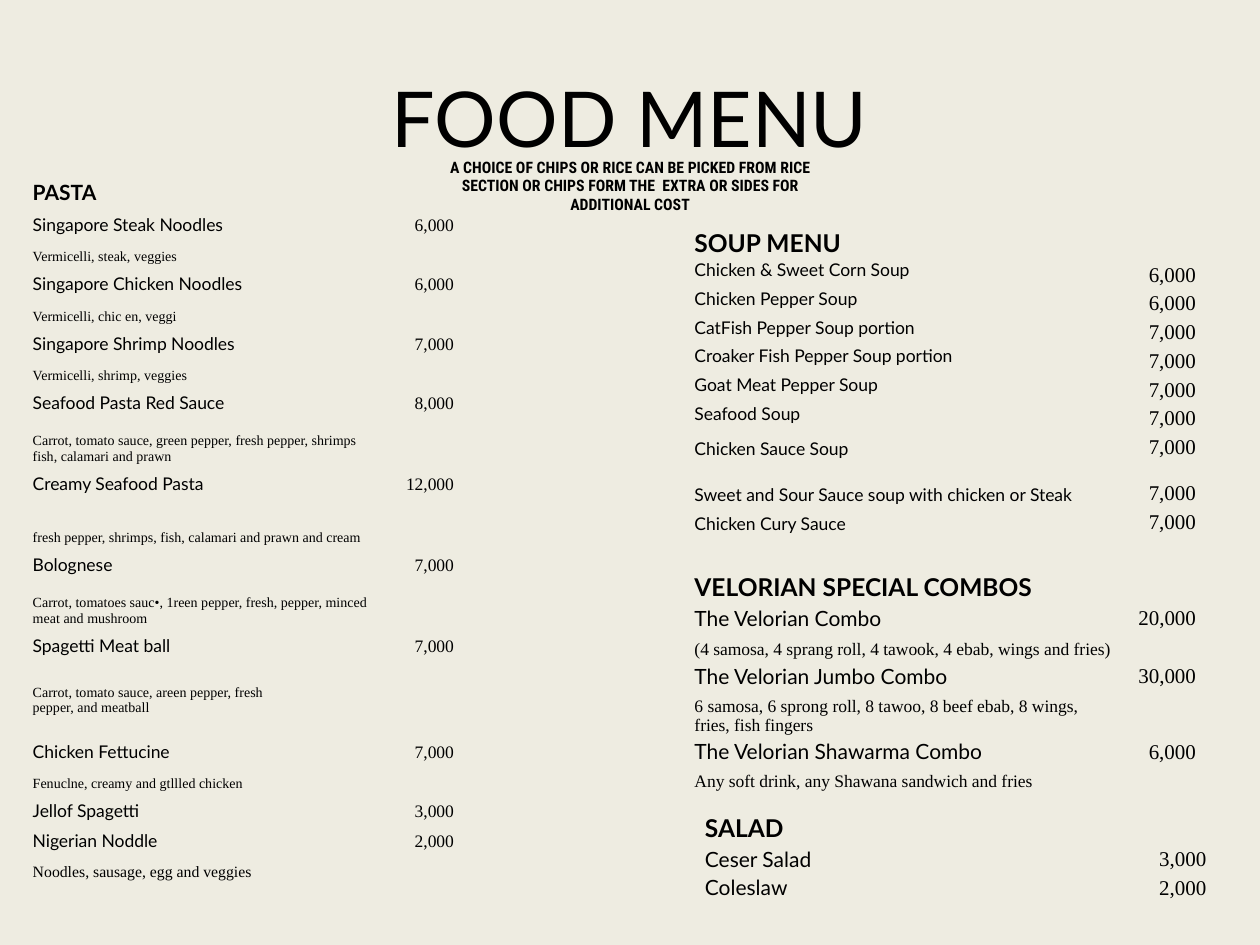
from dataclasses import dataclass

import lxml.etree
import pptx
import pptx.dml.color
import pptx.enum.text
import pptx.oxml.ns
import pptx.util

Cm = pptx.util.Cm
Pt = pptx.util.Pt
Align = pptx.enum.text.PP_ALIGN
Anchor = pptx.enum.text.MSO_ANCHOR


@dataclass(frozen=True)
class Theme:
    paper: str = "EEECE1"
    ink: str = "000000"
    sans: str = "Lato"
    serif: str = "Times New Roman"
    narrow: str = "Roboto Condensed"
    title: float = 44
    intro: float = 9
    inset: float = 0.03
    plain: str = "{2D5ABB26-0587-4C30-8999-92F81FD0307C}"  # table without style


@dataclass(frozen=True)
class Dish:
    name: str
    price: str
    note: str = ""
    note_high: float = 0.59
    note_size: float = 0  # 0 takes the size of the menu
    note_gap: float = 0  # space under the note
    high: float = 0  # 0 takes the height of the menu
    top: bool = False  # name sits at the top of its row


@dataclass(frozen=True)
class Menu:
    head: str
    left: float
    top: float
    wide: tuple[float, float]
    head_high: float
    high: float
    head_size: float
    name_size: float
    price_size: float
    note_size: float
    dishes: tuple[Dish, ...]


THEME = Theme()
PAGE = (25.4, 19.05)
WIDE = (8.47, 1.7)
INTRO = ("A CHOICE OF CHIPS OR RICE CAN BE PICKED FROM RICE SECTION OR CHIPS "
         "FORM THE  EXTRA OR SIDES FOR ADDITIONAL COST")

PASTA = Menu("PASTA", 0.63, 3.39, (7.12, 1.43), 0.74, 0.61, 12, 10, 10, 8, (
    Dish("Singapore Steak Noodles", "6,000", "Vermicelli, steak, veggies"),
    Dish("Singapore Chicken Noodles", "6,000", "Vermicelli, chic en, veggi"),
    Dish("Singapore Shrimp Noodles", "7,000", "Vermicelli, shrimp, veggies"),
    Dish("Seafood Pasta Red Sauce", "8,000",
         "Carrot, tomato sauce, green pepper, fresh pepper, shrimps fish, calamari and prawn", 1.02),
    Dish("Creamy Seafood Pasta", "12,000",
         "fresh pepper, shrimps, fish, calamari and prawn and cream", 1.02),
    Dish("Bolognese", "7,000",
         "Carrot, tomatoes sauc•, 1reen pepper, fresh, pepper, minced meat and mushroom", 1.02),
    Dish("Spagetti Meat ball", "7,000",
         "Carrot, tomato sauce, areen pepper, fresh\npepper, and meatball", 1.52, note_gap=0.32),
    Dish("Chicken Fettucine", "7,000", "Fenuclne, creamy and gtllled chicken"),
    Dish("Jellof Spagetti", "3,000"),
    Dish("Nigerian Noddle", "2,000", "Noodles, sausage, egg and veggies", note_size=9),
))

SOUP = Menu("SOUP MENU", 13.97, 4.46, WIDE, 0.74, 0.58, 14, 10, 12, 10, (
    Dish("Chicken & Sweet Corn Soup", "6,000", top=True),
    Dish("Chicken Pepper Soup", "6,000", top=True),
    Dish("CatFish Pepper Soup portion", "7,000", top=True),
    Dish("Croaker Fish Pepper Soup portion", "7,000", top=True),
    Dish("Goat Meat Pepper Soup", "7,000", top=True),
    Dish("Seafood Soup", "7,000", top=True),
    Dish("Chicken Sauce Soup", "7,000"),
    Dish("Sweet and Sour Sauce soup with chicken or Steak", "7,000", high=0.93),
    Dish("Chicken Cury Sauce", "7,000"),
))

COMBOS = Menu("VELORIAN SPECIAL COMBOS", 13.97, 11.42, WIDE, 0.71, 0.58, 14, 12, 12, 10, (
    Dish("The Velorian Combo", "20,000",
         "(4 samosa, 4 sprang roll, 4 tawook, 4 ebab, wings and fries)"),
    Dish("The Velorian Jumbo Combo", "30,000",
         "6 samosa, 6 sprong roll, 8 tawoo, 8 beef ebab, 8 wings, fries, fish fingers", 0.94),
    Dish("The Velorian Shawarma Combo", "6,000",
         "Any soft drink, any Shawana sandwich and fries", 0.56),
))

SALAD = Menu("SALAD", 14.18, 16.28, WIDE, 0.71, 0.58, 14, 12, 12, 10, (
    Dish("Ceser Salad", "3,000"),
    Dish("Coleslaw", "2,000"),
))


def style(para, face: str, size: float, bold: bool = False, align=Align.LEFT) -> None:
    para.alignment = align
    for run in para.runs:
        run.font.name = face
        run.font.size = Pt(size)
        run.font.bold = bold
        run.font.color.rgb = pptx.dml.color.RGBColor.from_string(THEME.ink)


def fill_cell(cell, text: str, face: str, size: float, bold: bool = False,
              align=Align.LEFT, anchor=Anchor.BOTTOM, gap: float = 0) -> None:
    cell.fill.background()
    cell.margin_left = cell.margin_right = cell.margin_top = Cm(THEME.inset)
    cell.margin_bottom = Cm(gap)
    cell.vertical_anchor = anchor
    para = cell.text_frame.paragraphs[0]
    para.text = text
    style(para, face, size, bold, align)
    if not text:  # keeps an empty cell from stretching its row
        lxml.etree.SubElement(para._p, pptx.oxml.ns.qn("a:endParaRPr"), sz=str(int(size * 100)))


def add_grid(slide, left: float, top: float, wide: tuple[float, ...], highs: list[float]):
    frame = slide.shapes.add_table(len(highs), len(wide), Cm(left), Cm(top),
                                   Cm(sum(wide)), Cm(sum(highs)))
    grid = frame.table
    grid.first_row = grid.horz_banding = False
    grid._tbl.tblPr.find(pptx.oxml.ns.qn("a:tableStyleId")).text = THEME.plain
    for col, width in zip(grid.columns, wide):
        col.width = Cm(width)
    for row, high in zip(grid.rows, highs):
        row.height = Cm(high)
    return grid


def add_menu(slide, menu: Menu) -> None:
    highs = [menu.head_high]
    for dish in menu.dishes:
        highs.append(dish.high or menu.high)
        if dish.note:
            highs.append(dish.note_high)
    grid = add_grid(slide, menu.left, menu.top, menu.wide, highs)

    # Heading row
    fill_cell(grid.cell(0, 0), menu.head, THEME.sans, menu.head_size, bold=True)
    fill_cell(grid.cell(0, 1), "", THEME.serif, menu.note_size)

    # One row for each dish, and one for its note
    row = 1
    for dish in menu.dishes:
        anchor = Anchor.TOP if dish.top else Anchor.BOTTOM
        fill_cell(grid.cell(row, 0), dish.name, THEME.sans, menu.name_size, anchor=anchor)
        fill_cell(grid.cell(row, 1), dish.price, THEME.serif, menu.price_size, align=Align.RIGHT)
        row += 1
        if dish.note:
            size = dish.note_size or menu.note_size
            fill_cell(grid.cell(row, 0), dish.note, THEME.serif, size, gap=dish.note_gap)
            fill_cell(grid.cell(row, 1), "", THEME.serif, size)
            row += 1


def main() -> None:
    deck = pptx.Presentation()
    deck.slide_width, deck.slide_height = map(Cm, PAGE)
    slide = deck.slides.add_slide(deck.slide_layouts[5])
    slide.background.fill.solid()
    slide.background.fill.fore_color.rgb = pptx.dml.color.RGBColor.from_string(THEME.paper)

    # Title
    title = slide.shapes.title
    title.left, title.top, title.width, title.height = map(Cm, (1.27, 0.76, 22.86, 3.18))
    title.text_frame.text = "FOOD MENU"
    title.text_frame.vertical_anchor = Anchor.MIDDLE
    style(title.text_frame.paragraphs[0], THEME.sans, THEME.title, align=Align.CENTER)

    # Line under the title
    intro = add_grid(slide, 8.47, 3.17, (8.46,), [0.85])
    fill_cell(intro.cell(0, 0), INTRO, THEME.narrow, THEME.intro, bold=True, align=Align.CENTER)

    # Menus
    for menu in (PASTA, SOUP, COMBOS, SALAD):
        add_menu(slide, menu)

    deck.save("out.pptx")


if __name__ == "__main__":
    main()
